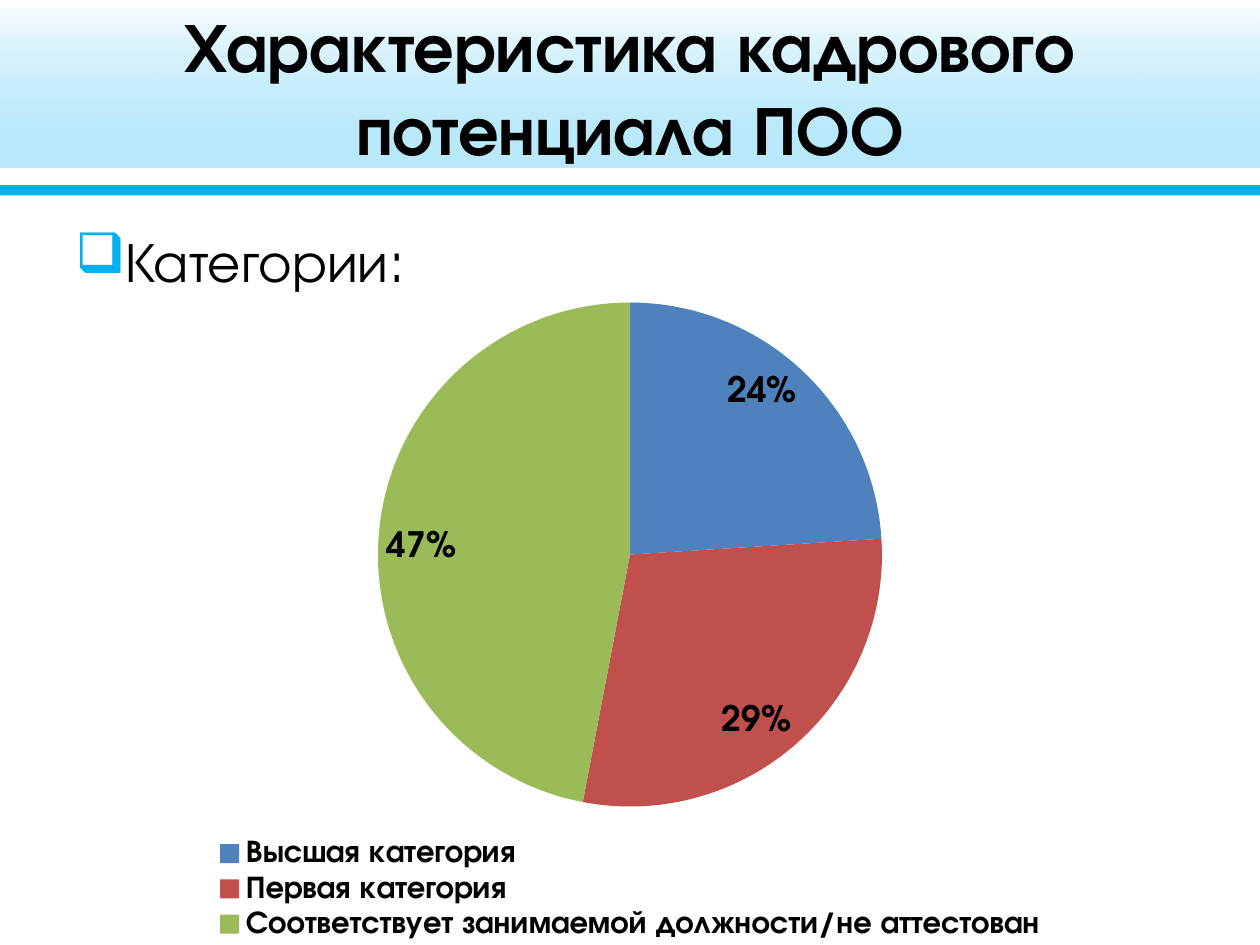
from lxml import etree
from pptx import Presentation
from pptx.chart.data import CategoryChartData
from pptx.dml.color import RGBColor
from pptx.enum.chart import XL_CHART_TYPE, XL_LABEL_POSITION, XL_LEGEND_POSITION
from pptx.enum.shapes import MSO_SHAPE
from pptx.enum.text import MSO_ANCHOR, PP_ALIGN
from pptx.oxml import parse_xml
from pptx.oxml.ns import nsdecls, qn
from pptx.util import Pt

RECT = MSO_SHAPE.RECTANGLE
PIE = XL_CHART_TYPE.PIE
BOTTOM = XL_LEGEND_POSITION.BOTTOM
INSIDE_END = XL_LABEL_POSITION.INSIDE_END
FONT = "TeX Gyre Adventor"

# Content
TITLE = "Характеристика кадрового потенциала ПОО"
HEADING = "Категории:"
CATEGORIES = [  # name, share, colour
    ("Высшая категория", 0.24, "4F81BD"),
    ("Первая категория", 0.29, "C0504D"),
    ("Соответствует занимаемой должности/не аттестован", 0.47, "9BBB59"),
]

# Geometry and band gradients: position, colour, opacity in percent
W, H = 720, 540
BAND_H = 96
BANDS = [
    [(0, "FFFFFF", 80), (100, "FFFFFF", 23)],
    [(0, "FFFFFF", 46), (84, "00B0F0", 27)],
]
PIE_AREA = {"x": 0.3, "y": 0.025, "w": 0.4, "h": 0.765}


def rgb(value):
    return RGBColor.from_string(value)


def style(font, size, bold=False):
    font.name, font.size, font.bold = FONT, Pt(size), bold
    font.color.rgb = rgb("000000")


def add_rect(s, y, h):
    sp = s.shapes.add_shape(RECT, 0, Pt(y), Pt(W), Pt(h))
    sp.shadow.inherit = False
    sp.line.fill.background()
    return sp


def add_band(s, stops):
    fill = add_rect(s, 0, BAND_H).fill
    fill.gradient()
    fill.gradient_angle = 270
    for stop, (position, color, _) in zip(fill.gradient_stops, stops):
        stop.position = position / 100
        stop.color.rgb = rgb(color)


def set_opacity(sp, stops):
    colors = sp.fill._xPr.iter(qn("a:srgbClr"))
    for color, (_, _, opacity) in zip(colors, stops):
        etree.SubElement(color, qn("a:alpha")).set("val", str(opacity * 1000))


def add_text(s, text, box, size, bold=False):
    tf = s.shapes.add_textbox(*(Pt(v) for v in box)).text_frame
    tf.word_wrap = True
    p = tf.paragraphs[0]
    r = p.add_run()
    r.text = text
    style(r.font, size, bold)
    return tf, p


prs = Presentation()
prs.slide_width, prs.slide_height = Pt(W), Pt(H)
s = prs.slides.add_slide(prs.slide_layouts[6])

# Header bands with the stripe between them in the stack
add_band(s, BANDS[0])
set_opacity(s.shapes[-1], BANDS[0])
stripe = add_rect(s, 105.8, 5.8)
stripe.fill.solid()
stripe.fill.fore_color.rgb = rgb("00B0F0")
add_band(s, BANDS[1])
set_opacity(s.shapes[-1], BANDS[1])

# Title
tf, p = add_text(s, TITLE, (36, 4.3, 648, 90), 39.6, True)
tf.vertical_anchor = MSO_ANCHOR.MIDDLE
p.alignment = PP_ALIGN.CENTER

# Bulleted heading
tf, p = add_text(s, HEADING, (36, 126, 648, 48), 32)
pPr = p._p.get_or_add_pPr()
pPr.set("marL", str(Pt(27)))
pPr.set("indent", str(Pt(-27)))
bullet_color = etree.SubElement(pPr, qn("a:buClr"))
etree.SubElement(bullet_color, qn("a:srgbClr")).set("val", "00B0F0")
etree.SubElement(pPr, qn("a:buChar")).set("char", "❑")

# Pie chart
data = CategoryChartData(number_format="0%")
data.categories = [name for name, _, _ in CATEGORIES]
data.add_series("Категории", [share for _, share, _ in CATEGORIES])
chart = s.shapes.add_chart(PIE, 0, Pt(163.5), Pt(W), Pt(376.5), data).chart
style(chart.font, 18, True)
chart.has_title = False
chart.has_legend = True
chart.legend.position = BOTTOM
chart.legend.include_in_layout = False
style(chart.legend.font, 18, True)

plot = chart.plots[0]
plot.vary_by_categories = True
for i, (_, _, color) in enumerate(CATEGORIES):
    fill = plot.series[0].points[i].format.fill
    fill.solid()
    fill.fore_color.rgb = rgb(color)

plot.has_data_labels = True
labels = plot.data_labels
labels.show_value = True
labels.show_percentage = False
labels.number_format, labels.number_format_is_linked = "0%", False
labels.position = INSIDE_END
style(labels.font, 20, True)

# Fixed place of the pie inside the chart
modes = '<c:layoutTarget val="inner"/><c:xMode val="edge"/><c:yMode val="edge"/>'
sizes = "".join(f'<c:{k} val="{v}"/>' for k, v in PIE_AREA.items())
plot_area = chart._chartSpace.chart.plotArea
for old in plot_area.findall(qn("c:layout")):
    plot_area.remove(old)
plot_area.insert(0, parse_xml(
    f'<c:layout {nsdecls("c")}><c:manualLayout>{modes}{sizes}'
    "</c:manualLayout></c:layout>"))

prs.save("out.pptx")
